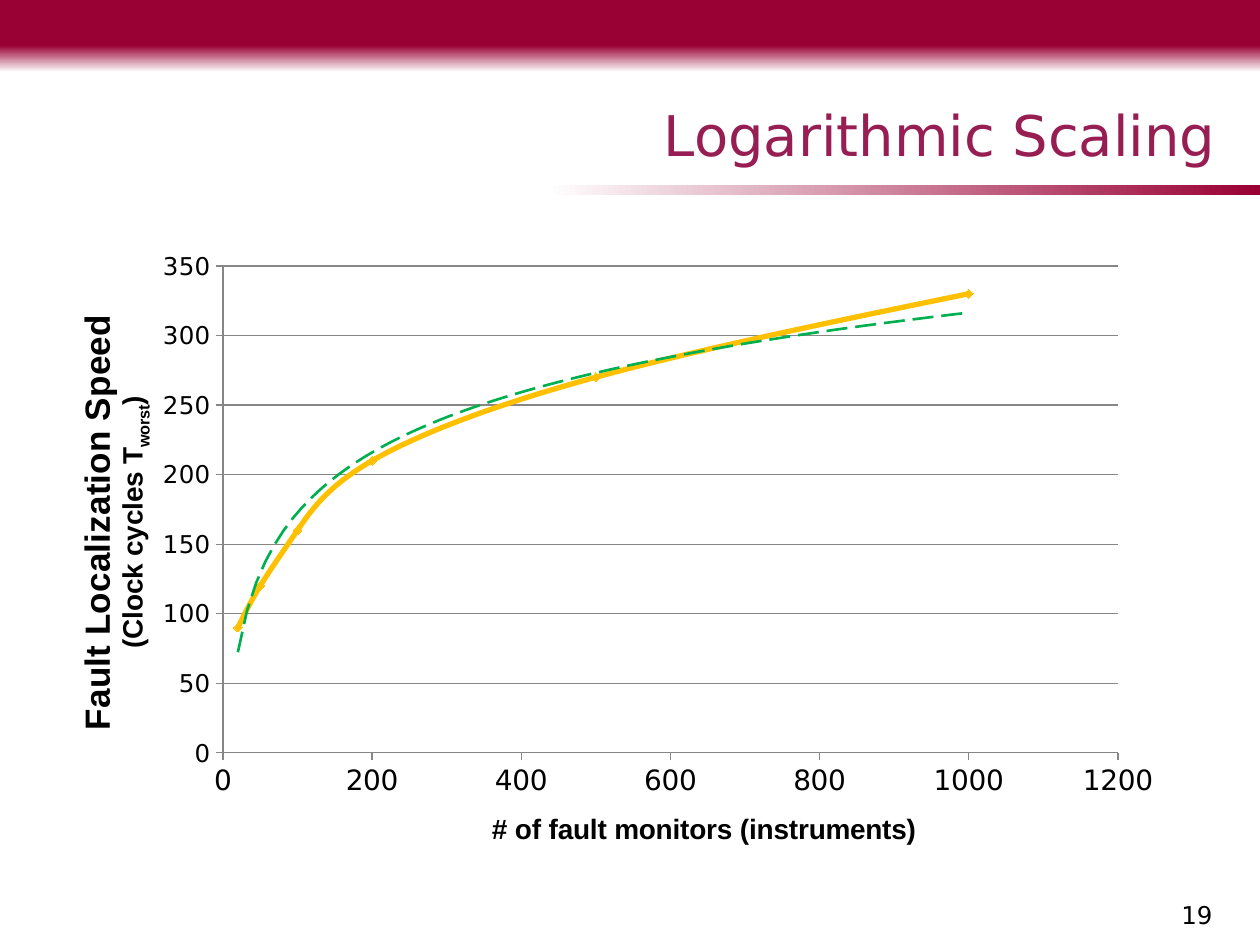
"""Builds the slide "Logarithmic Scaling" with a smooth scatter chart and its trend line."""
from pptx import Presentation
from pptx.chart.data import XyChartData
from pptx.dml.color import RGBColor
from pptx.enum.chart import XL_CHART_TYPE, XL_MARKER_STYLE, XL_TICK_MARK
from pptx.enum.shapes import MSO_SHAPE
from pptx.enum.text import MSO_ANCHOR, PP_ALIGN
from pptx.oxml import parse_xml
from pptx.oxml.ns import nsdecls, qn
from pptx.util import Emu, Pt

SCALE = 914400 / 126
CHART_BOX = (59, 175, 1116, 745)
COLORS = {"crimson": "990033", "white": "FFFFFF", "title": "971E53", "black": "000000",
          "gold": "FFC000", "green": "00B050", "gray": "868686"}
COLOR = {name: RGBColor.from_string(value) for name, value in COLORS.items()}


def write(paragraph, text, size, font="DejaVu Sans", color="black", bold=False, align=None, baseline=None):
    paragraph.alignment = align
    run = paragraph.add_run()
    run.text = text
    run.font.size = Pt(size)
    run.font.name = font
    run.font.bold = bold
    run.font.color.rgb = COLOR[color]
    if baseline is not None:
        run.font._element.set("baseline", str(baseline))


def place(element, index, target="", **lengths):
    for layout in element.findall(qn("c:layout")):
        element.remove(layout)
    chart_size = {"x": CHART_BOX[2], "w": CHART_BOX[2], "y": CHART_BOX[3], "h": CHART_BOX[3]}
    values = "".join(f'<c:{key} val="{length / chart_size[key]}"/>' for key, length in lengths.items())
    element.insert(index, parse_xml(
        f'<c:layout {nsdecls("c")}><c:manualLayout>{target}<c:xMode val="edge"/>'
        f'<c:yMode val="edge"/>{values}</c:manualLayout></c:layout>'))


presentation = Presentation()
presentation.slide_width = Emu(round(1260 * SCALE))
presentation.slide_height = Emu(round(945 * SCALE))
slide = presentation.slides.add_slide(presentation.slide_layouts[5])

bars = [((0, 0, 1260, 72), 0, 270, 0.63), ((547, 185, 713, 10), 180, 0, 0)]
for box, rotation, angle, start in bars:
    bar = slide.shapes.add_shape(MSO_SHAPE.RECTANGLE, *[Emu(round(length * SCALE)) for length in box])
    bar.shadow.inherit = False
    bar.rotation = rotation
    bar.line.fill.background()
    bar.fill.gradient()
    bar.fill.gradient_angle = angle
    for stop, color, position in zip(bar.fill.gradient_stops, ("crimson", "white"), (start, 1)):
        stop.color.rgb = COLOR[color]
        stop.position = position

title = slide.shapes.title
title.left, title.top, title.width, title.height = [Emu(round(n * SCALE)) for n in (0, 94, 1229, 80)]
title.text_frame.vertical_anchor = MSO_ANCHOR.BOTTOM
write(title.text_frame.paragraphs[0], "Logarithmic Scaling", 32, color="title", align=PP_ALIGN.RIGHT)

page_number = slide.shapes.add_textbox(*[Emu(round(n * SCALE)) for n in (903, 894, 322, 51)])
page_number.text_frame.word_wrap = True
write(page_number.text_frame.paragraphs[0], "19", 14, align=PP_ALIGN.RIGHT)

chart_data = XyChartData()
speed = chart_data.add_series("Series 1")
for monitors, cycles in [(20, 90), (50, 120), (100, 160), (200, 210), (500, 270), (1000, 330)]:
    speed.add_data_point(monitors, cycles)
chart = slide.shapes.add_chart(XL_CHART_TYPE.XY_SCATTER_SMOOTH,
                               *[Emu(round(n * SCALE)) for n in CHART_BOX], chart_data).chart
chart.has_title = False
chart.has_legend = False
chart.font.name = "DejaVu Sans"
chart.font.size = Pt(10)
chart.font.color.rgb = COLOR["black"]
chart.plots[0].vary_by_categories = False
place(chart.plots[0]._element.getparent(), 0, '<c:layoutTarget val="inner"/>', x=164, y=91, w=895, h=487)

for axis, maximum, step, size in [(chart.category_axis, 1200, 200, 16), (chart.value_axis, 350, 50, 14)]:
    axis.minimum_scale, axis.maximum_scale, axis.major_unit = 0, maximum, step
    axis.major_tick_mark = XL_TICK_MARK.OUTSIDE
    axis.minor_tick_mark = XL_TICK_MARK.NONE
    axis.tick_labels.font.size = Pt(size)
    axis.format.line.color.rgb = COLOR["gray"]
    axis.has_major_gridlines = False
chart.value_axis.has_major_gridlines = True
chart.value_axis.major_gridlines.format.line.color.rgb = COLOR["gray"]

monitors_title = chart.category_axis.axis_title
write(monitors_title.text_frame.paragraphs[0], "# of fault monitors (instruments)", 16, font="Arial", bold=True)
place(monitors_title._element, 1, x=428, y=631)

speed_title = chart.value_axis.axis_title
write(speed_title.text_frame.paragraphs[0], "Fault Localization Speed", 20, font="Arial", bold=True)
unit = speed_title.text_frame.add_paragraph()
for text, baseline in [("(Clock cycles T", None), ("worst", -25000), (")", None)]:
    write(unit, text, 16, font="Arial", bold=True, baseline=baseline)
body = speed_title.text_frame._txBody.bodyPr
body.set("rot", "-5400000")
body.set("vert", "horz")
place(speed_title._element, 1, x=13, y=136)

series = chart.plots[0].series[0]
series._element.find(qn("c:smooth")).set("val", "1")
series.format.line.color.rgb = COLOR["gold"]
series.format.line.width = Pt(3)
series.marker.style = XL_MARKER_STYLE.DIAMOND
series.marker.size = 5
series.marker.format.fill.solid()
series.marker.format.fill.fore_color.rgb = COLOR["gold"]
series.marker.format.line.color.rgb = COLOR["gold"]
series._element.find(qn("c:xVal")).addprevious(parse_xml(
    f'<c:trendline {nsdecls("c", "a")}><c:spPr><a:ln w="{Pt(1.5)}"><a:solidFill>'
    f'<a:srgbClr val="{COLORS["green"]}"/></a:solidFill><a:prstDash val="lgDash"/></a:ln></c:spPr>'
    '<c:trendlineType val="log"/><c:dispRSqr val="0"/><c:dispEq val="0"/></c:trendline>'))

presentation.save("out.pptx")
